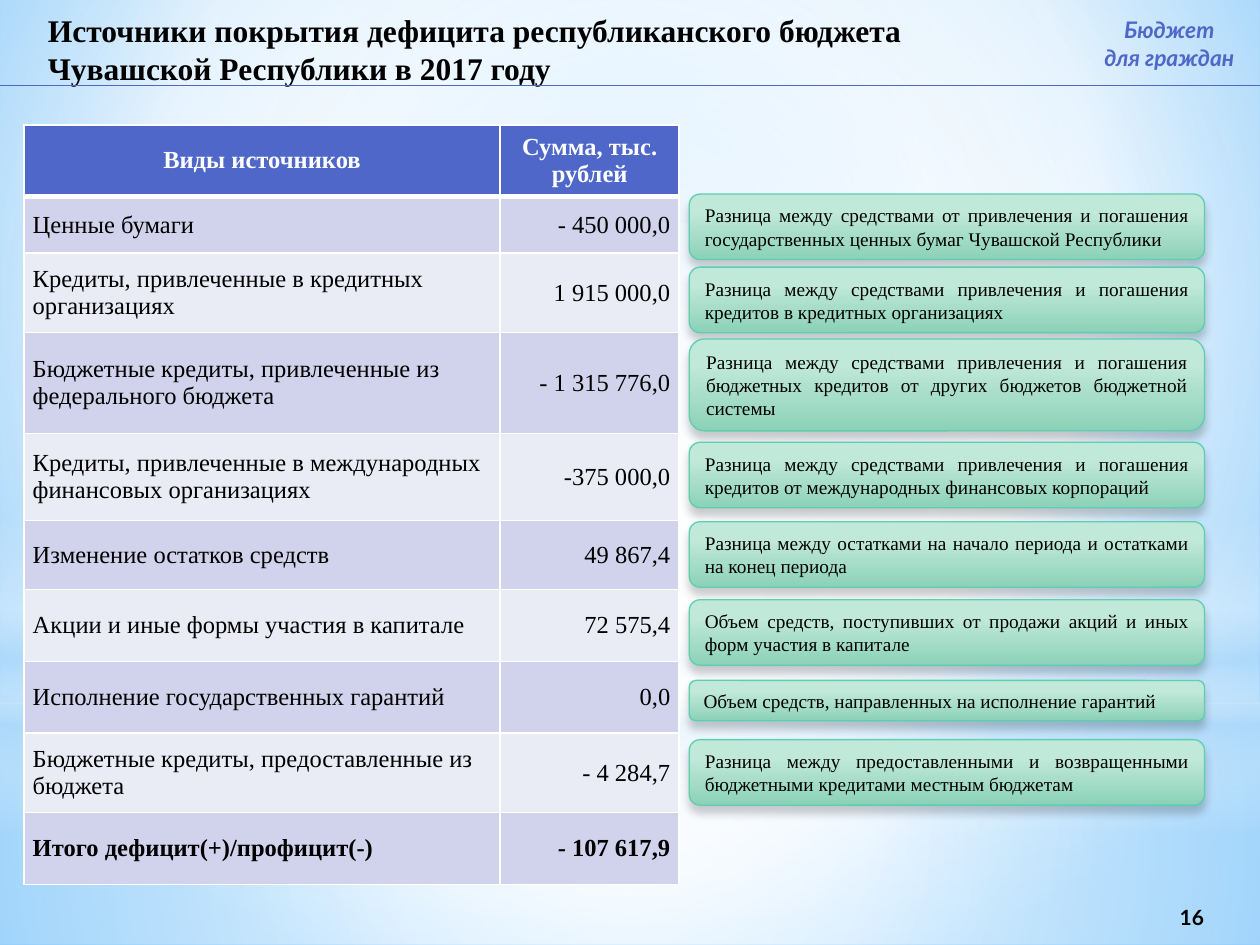
import pptx
import pptx.dml.color
import pptx.enum.shapes
import pptx.enum.text
import pptx.oxml
import pptx.oxml.ns
import pptx.util
from pptx.util import Inches

SHAPE = pptx.enum.shapes.MSO_SHAPE
ALIGN = pptx.enum.text.PP_ALIGN
ANCHOR = pptx.enum.text.MSO_ANCHOR
NS = pptx.oxml.ns.nsdecls("a")
SERIF, SANS = "Times New Roman", "Lato"
BLUE, BLACK, WHITE, SKY = "4E67C8", "000000", "FFFFFF", "B4DCFA"
BANDS = ("E9EBF5", "D0D3EB")

SOURCES = [
    ("Ценные бумаги", "- 450 000,0", 0.45),
    ("Кредиты, привлеченные в кредитных организациях", "1 915 000,0", 0.63),
    ("Бюджетные кредиты, привлеченные из федерального бюджета", "- 1 315 776,0", 0.8),
    ("Кредиты, привлеченные в международных финансовых организациях", "-375 000,0", 0.69),
    ("Изменение остатков средств", "49 867,4", 0.55),
    ("Акции и иные формы участия в капитале", "72 575,4", 0.57),
    ("Исполнение государственных гарантий", "0,0", 0.57),
    ("Бюджетные кредиты, предоставленные из бюджета", "- 4 284,7", 0.63),
    ("Итого дефицит(+)/профицит(-)", "- 107 617,9", 0.57),
]
NOTES = [
    (1.54, 0.52, "Разница между средствами от привлечения и погашения "
                 "государственных ценных бумаг Чувашской Республики"),
    (2.12, 0.52, "Разница между средствами привлечения и погашения "
                 "кредитов в кредитных организациях"),
    (2.69, 0.73, "Разница между средствами привлечения и погашения "
                 "бюджетных кредитов от других бюджетов бюджетной системы"),
    (3.51, 0.52, "Разница между средствами привлечения и погашения "
                 "кредитов от международных финансовых корпораций"),
    (4.14, 0.52, "Разница между остатками на начало периода и остатками на конец периода"),
    (4.76, 0.52, "Объем средств, поступивших от продажи акций и иных форм участия в капитале"),
    (5.4, 0.32, "Объем средств, направленных на исполнение гарантий"),
    (5.87, 0.52, "Разница между предоставленными и возвращенными "
                 "бюджетными кредитами местным бюджетам"),
]


def rgb(value):
    return pptx.dml.color.RGBColor.from_string(value)


def put_text(tf, text, size=14, font=SERIF, color=BLACK, bold=False, italic=False,
             align=ALIGN.LEFT, anchor=ANCHOR.MIDDLE, wrap=True):
    """Fill a text frame, one paragraph for each line of text."""
    tf.word_wrap = wrap
    tf.vertical_anchor = anchor
    for i, line in enumerate(text.split("\n")):
        p = tf.paragraphs[0] if i == 0 else tf.add_paragraph()
        p.alignment = align
        r = p.add_run()
        r.text = line
        r.font.size = pptx.util.Pt(size)
        r.font.name = font
        r.font.bold = bold
        r.font.italic = italic
        r.font.color.rgb = rgb(color)


def set_gradient(fill, parent, stops, focus=None):
    """Circular gradient around focus (l, t, r, b in percent), else top to bottom."""
    fill.solid()
    gs = "".join(
        f'<a:gs pos="{pos * 1000}"><a:srgbClr val="{color}">'
        f'<a:alpha val="{opacity * 1000}"/></a:srgbClr></a:gs>'
        for pos, color, opacity in stops)
    if focus:
        sides = " ".join(f'{k}="{v * 1000}"' for k, v in zip("ltrb", focus))
        shade = f'<a:path path="circle"><a:fillToRect {sides}/></a:path>'
    else:
        shade = '<a:lin ang="5400000" scaled="0"/>'
    grad = pptx.oxml.parse_xml(
        f'<a:gradFill {NS} rotWithShape="1"><a:gsLst>{gs}</a:gsLst>{shade}</a:gradFill>')
    solid = parent.find(pptx.oxml.ns.qn("a:solidFill"))
    parent.replace(solid, grad)


def set_borders(cell, bottom):
    tc_pr = cell._tc.get_or_add_tcPr()
    for i, (side, width) in enumerate((("L", 1), ("R", 1), ("T", 1), ("B", bottom))):
        tc_pr.insert(i, pptx.oxml.parse_xml(
            f'<a:ln{side} {NS} w="{width * 12700}"><a:solidFill>'
            f'<a:srgbClr val="{WHITE}"/></a:solidFill></a:ln{side}>'))


class SlideBuilder:
    def __init__(self, prs):
        self.s = prs.slides.add_slide(prs.slide_layouts[5])

    def background(self, stops, focus):
        fill = self.s.background.fill
        fill.solid()
        bg_pr = self.s._element.cSld.bg.bgPr
        set_gradient(fill, bg_pr, stops, focus)

    def gradient_shape(self, kind, box, stops, focus=None):
        sp = self.s.shapes.add_shape(kind, *map(Inches, box))
        set_gradient(sp.fill, sp._element.spPr, stops, focus)
        sp.line.fill.background()
        sp.shadow.inherit = False
        return sp

    def note(self, top, height, text):
        sp = self.gradient_shape(SHAPE.ROUNDED_RECTANGLE, (5.47, top, 4.09, height),
                                 [(28, "C0E9DA", 100), (100, "8CD1B8", 100)])
        sp.line.color.rgb = rgb("5DCEAF")
        sp.line.width = pptx.util.Pt(0.75)
        effects = sp._element.spPr.find(pptx.oxml.ns.qn("a:effectLst"))
        effects.append(pptx.oxml.parse_xml(
            f'<a:outerShdw {NS} blurRad="63500" dist="50800" dir="5400000" rotWithShape="0">'
            f'<a:srgbClr val="{BLACK}"><a:alpha val="20000"/></a:srgbClr></a:outerShdw>'))
        put_text(sp.text_frame, text, size=11, align=ALIGN.JUSTIFY)

    def table(self, left, top, widths, header, rows):
        heights = [0.57] + [height for *_, height in rows]
        frame = self.s.shapes.add_table(len(heights), len(widths), *map(
            Inches, (left, top, sum(widths), sum(heights))))
        table = frame.table
        for col, width in zip(table.columns, widths):
            col.width = Inches(width)
        for row, height in zip(table.rows, heights):
            row.height = Inches(height)
        for i, values in enumerate([header] + [row[:2] for row in rows]):
            for j, text in enumerate(values):
                cell = table.cell(i, j)
                cell.margin_left = cell.margin_right = Inches(0.07)
                cell.margin_top = cell.margin_bottom = Inches(0.05)
                cell.fill.solid()
                cell.fill.fore_color.rgb = rgb(BANDS[i % 2] if i else BLUE)
                set_borders(cell, 1 if i else 3)
                align = (ALIGN.LEFT, ALIGN.RIGHT)[j] if i else ALIGN.CENTER
                put_text(cell.text_frame, text, color=BLACK if i else WHITE,
                         bold=i in (0, len(rows)), align=align)
                cell.vertical_anchor = ANCHOR.MIDDLE

    def title(self, box, text):
        sp = self.s.shapes.title
        sp.left, sp.top, sp.width, sp.height = map(Inches, box)
        put_text(sp.text_frame, text, size=18, bold=True, anchor=ANCHOR.TOP)
        sp.text_frame.auto_size = pptx.enum.text.MSO_AUTO_SIZE.NONE
        self.s.shapes._spTree.append(sp._element)  # above the backdrop

    def text(self, box, text, **style):
        sp = self.s.shapes.add_textbox(*map(Inches, box))
        put_text(sp.text_frame, text, font=SANS, bold=True, align=ALIGN.CENTER, **style)

    def rule(self, y):
        line = self.s.shapes.add_connector(
            pptx.enum.shapes.MSO_CONNECTOR.STRAIGHT, 0, Inches(y), Inches(10), Inches(y))
        line.line.color.rgb = rgb(BLUE)
        line.line.width = pptx.util.Pt(0.75)
        line._element.spPr.append(pptx.oxml.parse_xml(f"<a:effectLst {NS}/>"))


def main():
    prs = pptx.Presentation()
    prs.slide_width, prs.slide_height = Inches(10), Inches(7.5)
    b = SlideBuilder(prs)
    center = (50, 50, 50, 50)
    b.background([(0, "9ED5FF", 100), (60, WHITE, 100), (100, "5BB9FF", 100)],
                 (20, 10, 20, 60))
    b.gradient_shape(SHAPE.RECTANGLE, (0, 5.58, 10, 1.92),
                     [(0, WHITE, 91), (37, WHITE, 76), (100, SKY, 79)], center)
    b.gradient_shape(SHAPE.RECTANGLE, (0, 0, 10, 5.58),
                     [(0, WHITE, 89), (48, WHITE, 62), (100, SKY, 79)], center)
    b.gradient_shape(SHAPE.RECTANGLE, (0, 4.12, 10, 2.5),
                     [(0, WHITE, 0), (29, WHITE, 30), (45, SKY, 40),
                      (55, WHITE, 26), (65, SKY, 60), (100, WHITE, 0)])
    b.gradient_shape(SHAPE.OVAL, (0, 1.75, 10, 5.58),
                     [(0, WHITE, 100), (56, WHITE, 0)], center)
    b.table(0.19, 0.99, (3.78, 1.42), ("Виды источников", "Сумма, тыс. рублей"), SOURCES)
    for top, height, text in NOTES:
        b.note(top, height, text)
    b.text((8.91, 7.08, 1.1, 0.4), "16", size=12)
    b.title((0.28, 0.04, 7.79, 0.6),
            "Источники покрытия дефицита республиканского бюджета Чувашской Республики в 2017 году")
    b.rule(0.68)
    b.text((8.61, 0.08, 1.34, 0.54), "Бюджет\nдля граждан", size=13, color=BLUE,
           italic=True, anchor=ANCHOR.TOP, wrap=False)
    prs.save("out.pptx")


if __name__ == "__main__":
    main()
